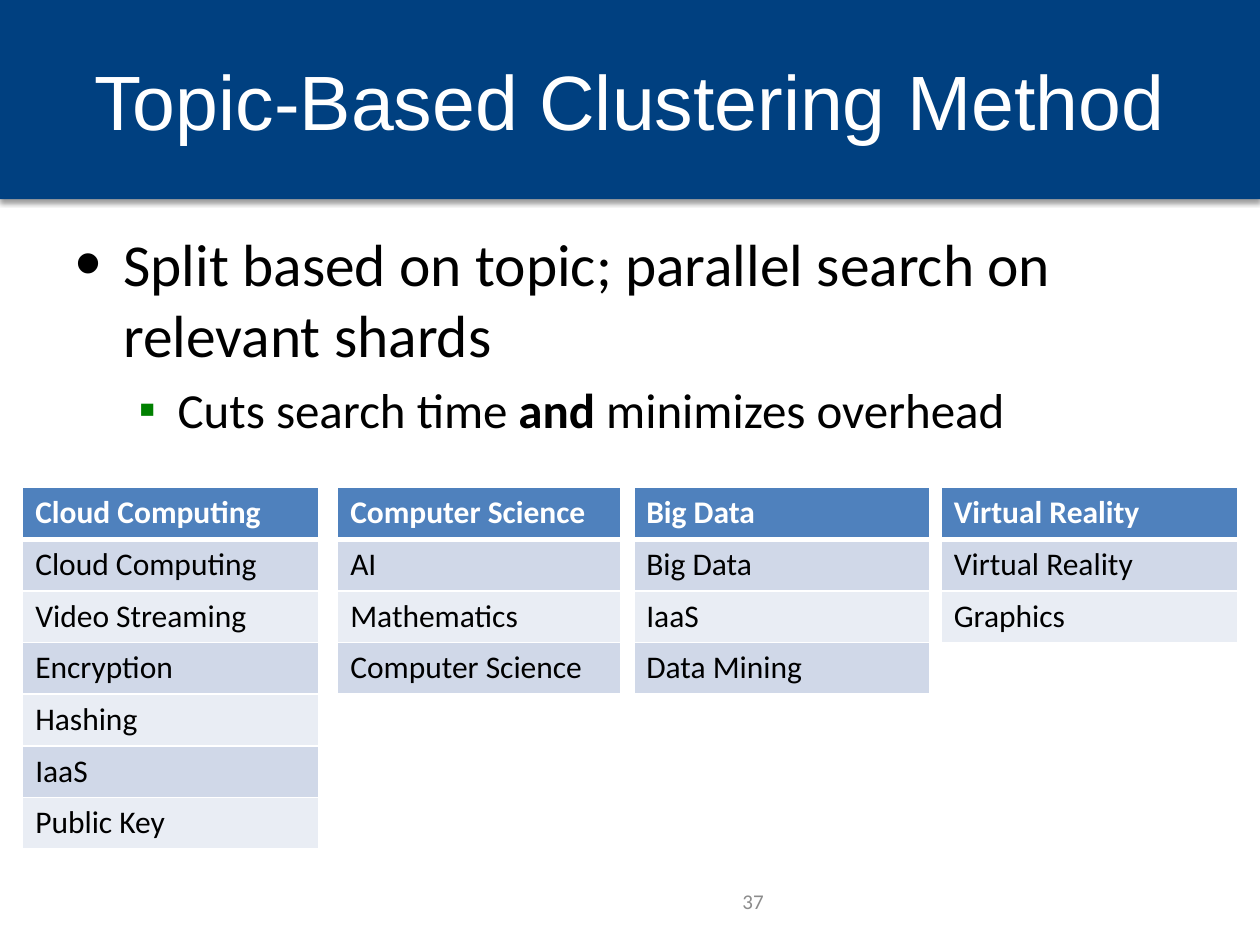
from dataclasses import dataclass

from lxml import etree
from pptx import Presentation
from pptx import util as u
from pptx.dml.color import RGBColor
from pptx.enum import shapes, text
from pptx.oxml import parse_xml
from pptx.oxml.ns import nsdecls, qn

WIDTH, HEIGHT = 10, 7.5
ROW_HEIGHT = 0.41
TABLE_TOP = 0.516  # share of slide height
WHITE, BLACK = "FFFFFF", "000000"
HEADER_FILL, BANDS = "4F81BD", ("D0D8E8", "E9EDF4")


@dataclass
class Shard:
    """One topic table; left and width are shares of the slide width."""
    left: float
    width: float
    topic: str
    members: tuple[str, ...]


@dataclass
class Bullet:
    level: int
    runs: tuple[tuple[str, bool], ...]
    size: float
    indent: float
    hanging: float
    marker: str
    marker_color: str
    marker_percent: int
    space_before: float


SHARDS = (
    Shard(0.018, 0.235, "Cloud Computing",
          ("Cloud Computing", "Video Streaming", "Encryption", "Hashing", "IaaS", "Public Key")),
    Shard(0.268, 0.225, "Computer Science", ("AI", "Mathematics", "Computer Science")),
    Shard(0.503, 0.235, "Big Data", ("Big Data", "IaaS", "Data Mining")),
    Shard(0.747, 0.235, "Virtual Reality", ("Virtual Reality", "Graphics")),
)

BULLETS = (
    Bullet(0, (("Split based on topic; parallel search on relevant shards", False),),
           34, 0.38, 0.38, "•", BLACK, 125, 0),
    Bullet(1, (("Cuts search time ", False), ("and", True), (" minimizes overhead", False)),
           28, 0.81, 0.31, "▪", "008000", 100, 5.6),
)


def rgb(value: str) -> RGBColor:
    return RGBColor.from_string(value)


def place(shape, left: float, top: float, width: float, height: float) -> None:
    shape.left, shape.top = u.Inches(left), u.Inches(top)
    shape.width, shape.height = u.Inches(width), u.Inches(height)


def add_run(paragraph, words: str, size: float, color: str,
            bold: bool = False, font: str = "Calibri") -> None:
    run = paragraph.add_run()
    run.text = words
    run.font.name, run.font.size, run.font.bold = font, u.Pt(size), bold
    run.font.color.rgb = rgb(color)


def add_banner(slide) -> None:
    banner = slide.shapes.add_shape(shapes.MSO_SHAPE.RECTANGLE, 0, 0,
                                    u.Inches(WIDTH), u.Inches(1.58))
    banner.fill.solid()
    banner.fill.fore_color.rgb = rgb("004080")
    banner.line.fill.background()
    banner.shadow.inherit = False
    effects = banner._element.spPr.find(qn("a:effectLst"))
    effects.append(parse_xml(
        f'<a:outerShdw {nsdecls("a")} blurRad="{u.Pt(3.1)}" dist="{u.Pt(1.6)}" dir="5400000" '
        'rotWithShape="0"><a:srgbClr val="000000"><a:alpha val="38000"/></a:srgbClr></a:outerShdw>'))
    slide.shapes._spTree.insert(2, banner._element)  # behind the title


def fill_title(title) -> None:
    place(title, 0.5, 0.17, 9, 1.25)
    title.text_frame.vertical_anchor = text.MSO_ANCHOR.MIDDLE
    paragraph = title.text_frame.paragraphs[0]
    paragraph.alignment = text.PP_ALIGN.CENTER
    add_run(paragraph, "Topic-Based Clustering Method", 44, WHITE, font="Arial")


def mark_bullet(paragraph, bullet: Bullet) -> None:
    properties = paragraph._p.get_or_add_pPr()
    properties.set("marL", str(u.Inches(bullet.indent)))
    properties.set("indent", str(-u.Inches(bullet.hanging)))
    color = etree.SubElement(properties, qn("a:buClr"))
    etree.SubElement(color, qn("a:srgbClr"), val=bullet.marker_color)
    etree.SubElement(properties, qn("a:buSzPct"), val=str(bullet.marker_percent * 1000))
    etree.SubElement(properties, qn("a:buFont"), typeface="Arial")
    etree.SubElement(properties, qn("a:buChar"), char=bullet.marker)


def fill_body(body) -> None:
    place(body, 0.5, 1.75, 9, 4.95)
    frame = body.text_frame
    frame.auto_size = text.MSO_AUTO_SIZE.NONE
    for index, bullet in enumerate(BULLETS):
        paragraph = frame.add_paragraph() if index else frame.paragraphs[0]
        paragraph.level = bullet.level
        mark_bullet(paragraph, bullet)
        paragraph.space_before = u.Pt(bullet.space_before)
        for words, bold in bullet.runs:
            add_run(paragraph, words, bullet.size, BLACK, bold)


def set_borders(cell, bottom: float, top: float) -> None:
    properties = cell._tc.get_or_add_tcPr()
    for side, width in (("L", 1), ("R", 1), ("T", top), ("B", bottom)):
        line = etree.SubElement(properties, qn(f"a:ln{side}"), w=str(u.Pt(width)))
        fill = etree.SubElement(line, qn("a:solidFill"))
        etree.SubElement(fill, qn("a:srgbClr"), val=WHITE)


def add_shard(slide, shard: Shard) -> None:
    labels = (shard.topic, *shard.members)
    frame = slide.shapes.add_table(
        len(labels), 1, u.Inches(shard.left * WIDTH), u.Inches(TABLE_TOP * HEIGHT),
        u.Inches(shard.width * WIDTH), u.Inches(ROW_HEIGHT * len(labels)))
    for index, label in enumerate(labels):
        is_header = index == 0
        frame.table.rows[index].height = u.Inches(ROW_HEIGHT)
        cell = frame.table.cell(index, 0)
        set_borders(cell, bottom=3 if is_header else 1, top=3 if index == 1 else 1)
        cell.fill.solid()
        cell.fill.fore_color.rgb = rgb(HEADER_FILL if is_header else BANDS[(index - 1) % 2])
        add_run(cell.text_frame.paragraphs[0], label, 18,
                WHITE if is_header else BLACK, is_header)


def add_page_number(slide) -> None:
    box = slide.shapes.add_textbox(u.Inches(3.83), u.Inches(6.95), u.Inches(2.33), u.Inches(0.4))
    box.text_frame.word_wrap = True
    box.text_frame.vertical_anchor = text.MSO_ANCHOR.MIDDLE
    paragraph = box.text_frame.paragraphs[0]
    paragraph.alignment = text.PP_ALIGN.RIGHT
    add_run(paragraph, "37", 12, "8C8C8C")


def main() -> None:
    presentation = Presentation()
    presentation.slide_width, presentation.slide_height = u.Inches(WIDTH), u.Inches(HEIGHT)
    slide = presentation.slides.add_slide(presentation.slide_layouts[1])
    add_banner(slide)
    fill_title(slide.shapes.title)
    fill_body(slide.placeholders[1])
    add_page_number(slide)
    for shard in SHARDS:
        add_shard(slide, shard)
    presentation.save("out.pptx")


if __name__ == "__main__":
    main()
